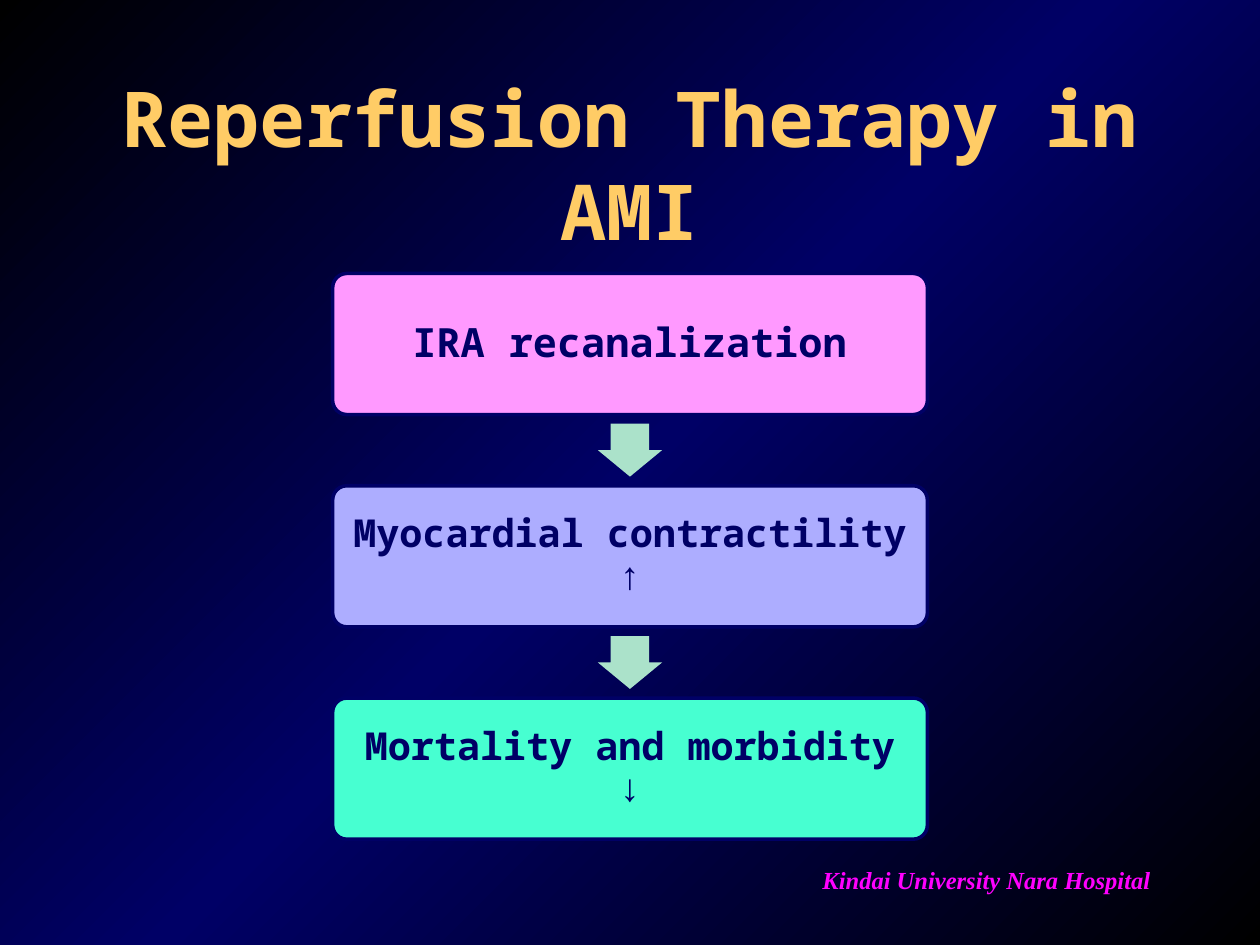
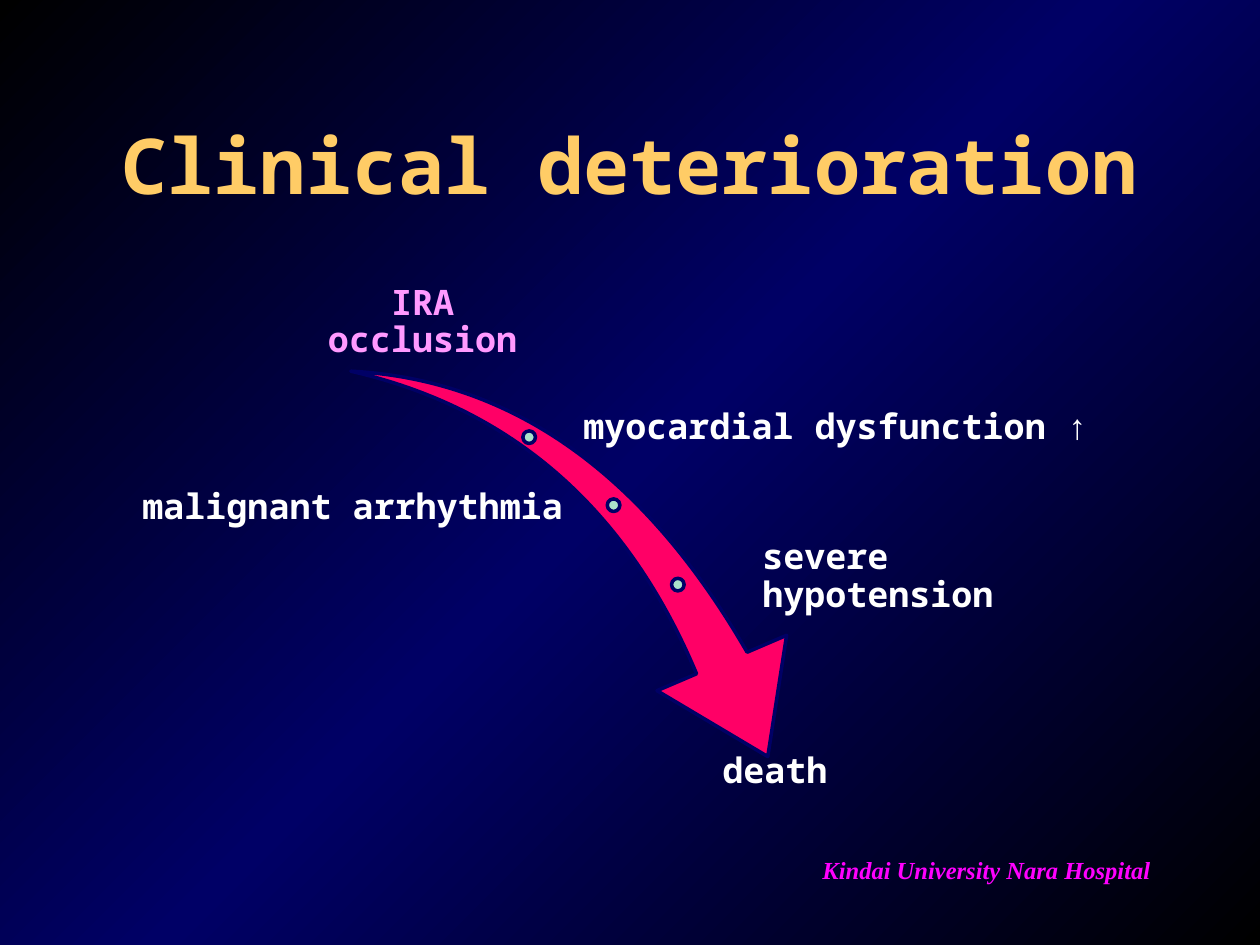
from copy import deepcopy
from dataclasses import dataclass

from pptx import Presentation
from pptx.dml.color import RGBColor
from pptx.enum.shapes import MSO_SHAPE
from pptx.enum.text import MSO_ANCHOR, PP_ALIGN
from pptx.oxml.ns import qn
from pptx.util import Inches, Pt


@dataclass(frozen=True)
class Theme:
    black: str = "000000"
    navy: str = "000066"
    gold: str = "FFCC66"
    pink: str = "FF99FF"
    lavender: str = "ADADFF"
    aqua: str = "47FFD1"
    mint: str = "ABE2CA"
    red: str = "FF0066"
    white: str = "FFFFFF"
    magenta: str = "FF00FF"
    font: str = "Noto Sans Mono"
    footer_font: str = "Times New Roman"
    title_size: int = 44
    first_step_size: int = 23
    step_size: int = 22
    label_size: int = 20
    footer_size: int = 14
    outline: int = 2
    line_spacing: float = 0.9


class Deck:
    def __init__(self, theme):
        self.theme = theme
        self.prs = Presentation()
        self.prs.slide_width, self.prs.slide_height = Inches(10), Inches(7.5)
        self.s = None
        self.set_background()

    def set_background(self):
        """Give the master a diagonal gradient that every slide inherits."""
        t = self.theme
        master = self.prs.slide_master
        fill = master.background.fill
        fill.gradient()
        fill.gradient_angle = 315
        stop_list = master.element.find(".//" + qn("a:gsLst"))
        stop_list.append(deepcopy(stop_list[-1]))
        stops = zip(fill.gradient_stops, (0, 0.5, 1), (t.black, t.navy, t.black))
        for stop, position, color in stops:
            stop.position = position
            stop.color.rgb = RGBColor.from_string(color)

    def new_slide(self, title, footer_top):
        t = self.theme
        self.s = self.prs.slides.add_slide(self.prs.slide_layouts[6])
        self.text(title, 0.75, 0.67, 8.5, 1.25, t.title_size, t.gold, spacing=1)
        footer = self.text("Kindai University Nara Hospital", 5.87, footer_top, 3.92, 0.5,
                           t.footer_size, t.magenta, anchor=MSO_ANCHOR.TOP,
                           inset=0.05, spacing=1)
        font = footer.text_frame.paragraphs[0].runs[0].font
        font.name, font.italic = t.footer_font, True

    def set_text(self, sp, text, size, color, align, anchor, inset, spacing):
        tf = sp.text_frame
        tf.text = text
        tf.word_wrap = True
        tf.vertical_anchor = anchor
        tf.margin_left = tf.margin_right = tf.margin_top = tf.margin_bottom = Inches(inset)
        p = tf.paragraphs[0]
        p.alignment, p.line_spacing = align, spacing
        font = p.runs[0].font
        font.name, font.size, font.bold = self.theme.font, Pt(size), True
        font.color.rgb = RGBColor.from_string(color)

    def text(self, text, x, y, w, h, size, color, align=PP_ALIGN.CENTER,
             anchor=MSO_ANCHOR.MIDDLE, inset=0.1, spacing=None):
        sp = self.s.shapes.add_textbox(Inches(x), Inches(y), Inches(w), Inches(h))
        self.set_text(sp, text, size, color, align, anchor, inset,
                      spacing or self.theme.line_spacing)
        return sp

    def shape(self, kind, x, y, w, h, fill, adjustments=(), outlined=True):
        sp = self.s.shapes.add_shape(kind, Inches(x), Inches(y), Inches(w), Inches(h))
        sp.shadow.inherit = False
        sp.fill.solid()
        sp.fill.fore_color.rgb = RGBColor.from_string(fill)
        if outlined:
            sp.line.color.rgb = RGBColor.from_string(self.theme.navy)
            sp.line.width = Pt(self.theme.outline)
        else:
            sp.line.fill.background()
        for i, value in enumerate(adjustments):
            sp.adjustments[i] = value
        return sp

    def step(self, text, y, h, fill, size):
        sp = self.shape(MSO_SHAPE.ROUNDED_RECTANGLE, 2.64, y, 4.72, h, fill, (0.1,))
        self.set_text(sp, text, size, self.theme.navy, PP_ALIGN.CENTER,
                      MSO_ANCHOR.MIDDLE, 0.09, self.theme.line_spacing)

    def label(self, text, x, y, w, align, anchor=MSO_ANCHOR.MIDDLE, color=None):
        self.text(text, x, y, w, 0.72, self.theme.label_size,
                  color or self.theme.white, align, anchor, inset=0.03)


def add_reperfusion_slide(deck):
    t = deck.theme
    deck.new_slide("Reperfusion Therapy in AMI", 6.82)
    steps = (
        ("IRA recanalization", t.pink, t.first_step_size),
        ("Myocardial contractility ↑", t.lavender, t.step_size),
        ("Mortality and morbidity ↓", t.aqua, t.step_size),
    )
    first_top, last_top, step_h = 2.17, 5.54, 1.12
    arrow_w, arrow_h = 0.51, 0.42
    pitch = (last_top - first_top) / (len(steps) - 1)
    for i, (text, fill, size) in enumerate(steps):
        top = first_top + i * pitch
        if i:
            arrow_top = top - (pitch - step_h + arrow_h) / 2
            deck.shape(MSO_SHAPE.DOWN_ARROW, 5 - arrow_w / 2, arrow_top, arrow_w, arrow_h,
                       t.mint, (0.6, 0.5), outlined=False)
        deck.step(text, top, step_h, fill, size)


def add_deterioration_slide(deck):
    t = deck.theme
    deck.new_slide("Clinical deterioration", 6.74)
    swoosh = deck.shape(MSO_SHAPE.SWOOSH_ARROW, 2.7, 3.06, 3.88, 2.71, t.red,
                        (0.16, 0.31))
    swoosh.rotation = 73.3
    for x, y in ((4.15, 3.42), (4.82, 3.96), (5.33, 4.59)):
        deck.shape(MSO_SHAPE.OVAL, x, y, 0.1, 0.1, t.mint)
    deck.label("IRA occlusion", 2.44, 2.17, 1.83, PP_ALIGN.CENTER, MSO_ANCHOR.BOTTOM, t.pink)
    deck.label("myocardial dysfunction ↑", 4.6, 3.04, 4.65, PP_ALIGN.LEFT)
    deck.label("malignant arrhythmia", 0.75, 3.67, 3.75, PP_ALIGN.RIGHT)
    deck.label("severe hypotension", 6.02, 4.22, 2.62, PP_ALIGN.LEFT)
    deck.label("death", 4.91, 5.95, 2.48, PP_ALIGN.CENTER, MSO_ANCHOR.TOP)


def main():
    deck = Deck(Theme())
    add_reperfusion_slide(deck)
    add_deterioration_slide(deck)
    deck.prs.save("out.pptx")


if __name__ == "__main__":
    main()
